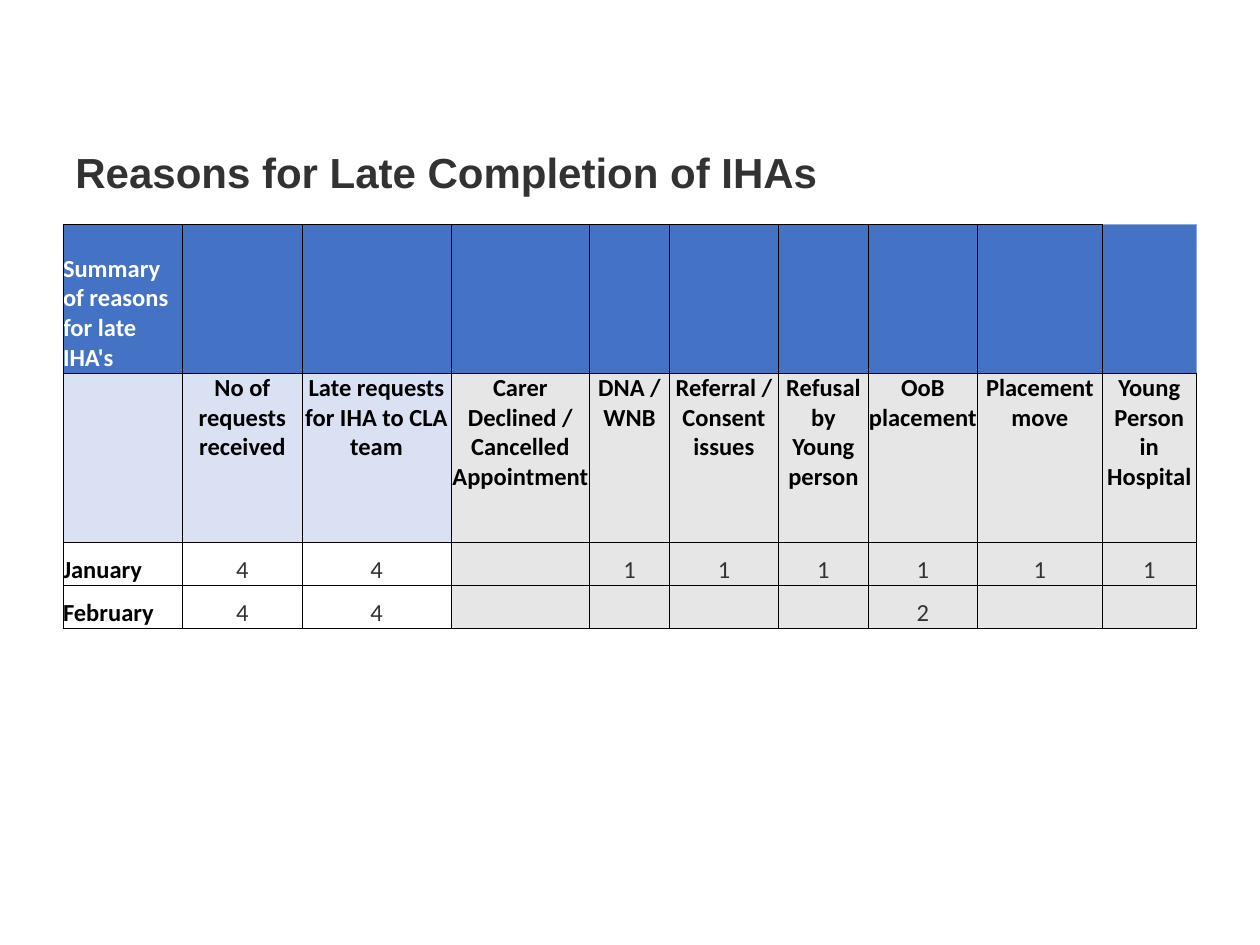
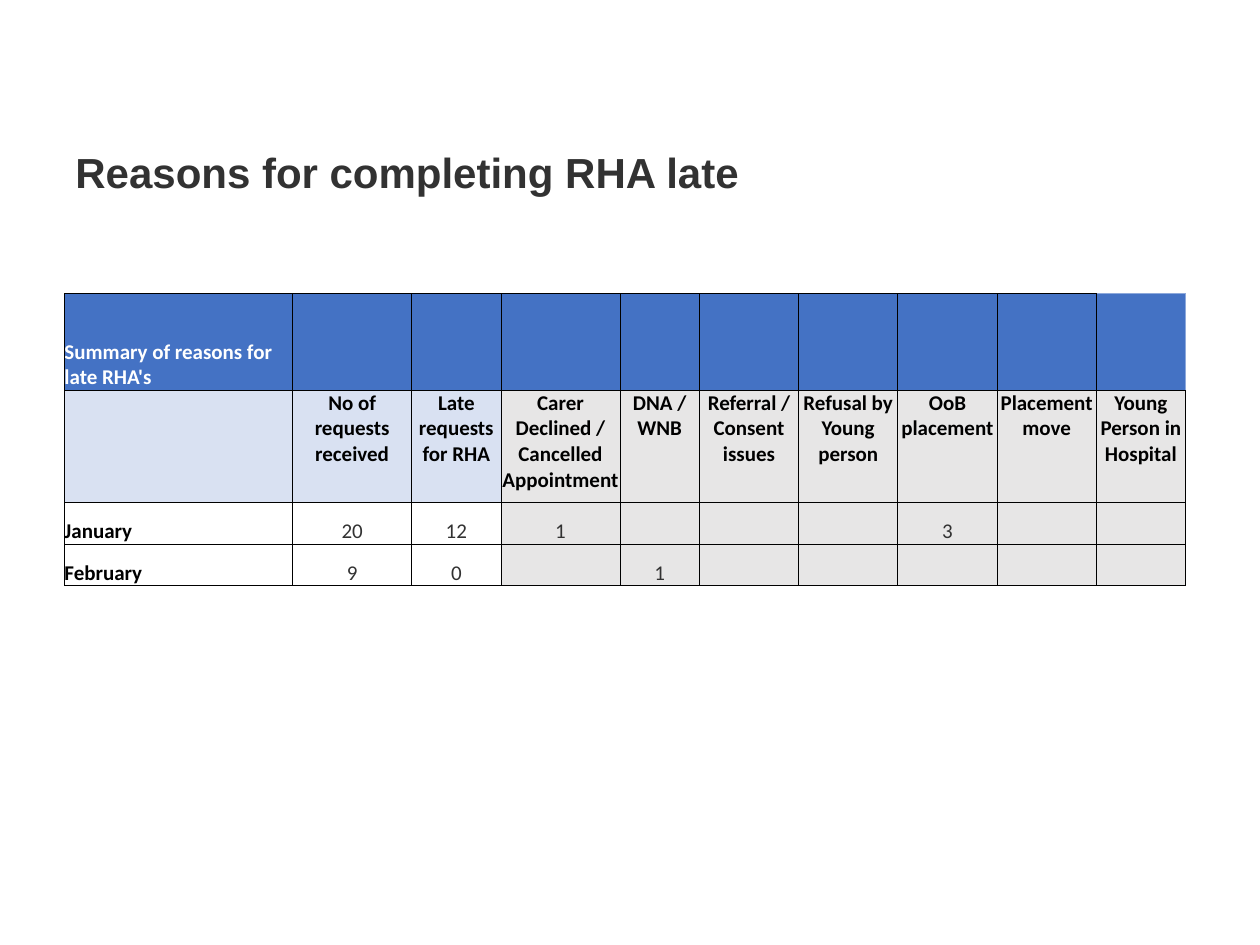
from lxml import etree
from pptx import Presentation
from pptx import util as u
from pptx.dml.color import RGBColor
from pptx.enum import text
from pptx.oxml.ns import qn

HUES = {"head": "4472C4", "edge": "8EA9DB", "pale": "D9E1F2", "grey": "E7E6E6",
        "ink": "323232", "black": "000000", "white": "FFFFFF"}
REASONS = ["Carer Declined / Cancelled Appointment", "DNA / WNB",
           "Referral / Consent issues", "Refusal by Young person",
           "OoB placement", "Placement move", "Young Person in Hospital"]
LEFT, MID = text.PP_ALIGN.LEFT, text.PP_ALIGN.CENTER
TOP, LOW = text.MSO_ANCHOR.TOP, text.MSO_ANCHOR.BOTTOM
SIDES = "LRTB"


class Deck:
    def __init__(self):
        self.pres = Presentation()
        self.pres.slide_width, self.pres.slide_height = u.Cm(25.4), u.Cm(19.05)
        self.slide = None

    def page(self):
        self.slide = self.pres.slides.add_slide(self.pres.slide_layouts[6])

    def label(self, frame, words, hue, align=LEFT, **style):
        para = frame.paragraphs[0]
        para.alignment = align
        run = para.add_run()
        run.text = words
        for key, value in style.items():
            setattr(run.font, key, value)
        run.font.color.rgb = RGBColor.from_string(HUES[hue])

    def title(self, words):
        box = self.slide.shapes.add_textbox(u.Cm(1.27), u.Cm(2.72), u.Cm(22.86), u.Cm(1.8))
        frame = box.text_frame
        frame.word_wrap = True
        frame.margin_top = u.Cm(0.23)
        self.label(frame, words, "ink", name="Arial", size=u.Pt(24), bold=True)

    def edge(self, cell, hues):
        """Draw the four borders; hues follow the order of SIDES."""
        props = cell._tc.get_or_add_tcPr()
        for side, hue in zip(SIDES, hues):
            line = etree.SubElement(props, qn(f"a:ln{side}"), w=str(u.Pt(0.5)))
            fill = etree.SubElement(line, qn("a:solidFill"))
            etree.SubElement(fill, qn("a:srgbClr"), val=HUES[hue])

    def cell(self, cell, words, fill, hue, align, anchor, size, bold):
        for side in ("left", "right", "top", "bottom"):
            setattr(cell, f"margin_{side}", 0)
        cell.vertical_anchor = anchor
        if fill:
            cell.fill.solid()
            cell.fill.fore_color.rgb = RGBColor.from_string(HUES[fill])
        else:
            cell.fill.background()
        if words:
            self.label(cell.text_frame, words, hue, align,
                       name="Calibri", size=u.Pt(size), bold=bold)

    def table(self, left, top, cols, rows, data, size):
        shape = self.slide.shapes.add_table(len(rows), len(cols), u.Cm(left), u.Cm(top),
                                            u.Cm(sum(cols)), u.Cm(sum(rows)))
        grid = shape.table
        for col, width in zip(grid.columns, cols):
            col.width = u.Cm(width)
        for row, height in zip(grid.rows, rows):
            row.height = u.Cm(height)
        last = len(cols) - 1
        for r, line in enumerate(data):
            for c in range(len(cols)):
                words = line[c] if c < len(line) else ""
                corner = r == 0 and c == last
                cell = grid.cell(r, c)
                self.edge(cell, ("black", "edge", "edge", "black") if corner else ["black"] * 4)
                if r == 0:
                    fill, hue = "head", "white"
                else:
                    fill = "grey" if c > 2 else "pale" if r == 1 else None
                    hue = "ink" if r > 1 and c else "black"
                self.cell(cell, words, fill, hue, MID if c else LEFT,
                          TOP if r == 1 else LOW, size, r < 2 or c == 0)


def heads(late):
    return ["", "No of requests received", late] + REASONS


def main():
    deck = Deck()
    deck.page()
    deck.title("Reasons for Late Completion of IHAs")
    deck.table(1.27, 4.52, [2.41, 2.41, 3, 2.8, 1.6, 2.21, 1.8, 2.21, 2.51, 1.9],
               [3, 3.42, 0.86, 0.86],
               [["Summary of reasons for late IHA's"],
                heads("Late requests for IHA to CLA team"),
                ["January", "4", "4", ""] + ["1"] * 6,
                ["February", "4", "4", "", "", "", "", "2"]], 14)
    deck.page()
    deck.title("Reasons for completing RHA late")
    deck.table(1.3, 5.92, [4.6, 2.4, 1.8, 2.4, 1.6, 2, 2, 2, 2, 1.8],
               [1.95, 2.26, 0.84, 0.84],
               [["Summary of reasons for late RHA's"],
                heads("Late requests for RHA"),
                ["January", "20", "12", "1", "", "", "", "3"],
                ["February", "9", "0", "", "1"]], 12)
    deck.pres.save("out.pptx")


if __name__ == "__main__":
    main()
